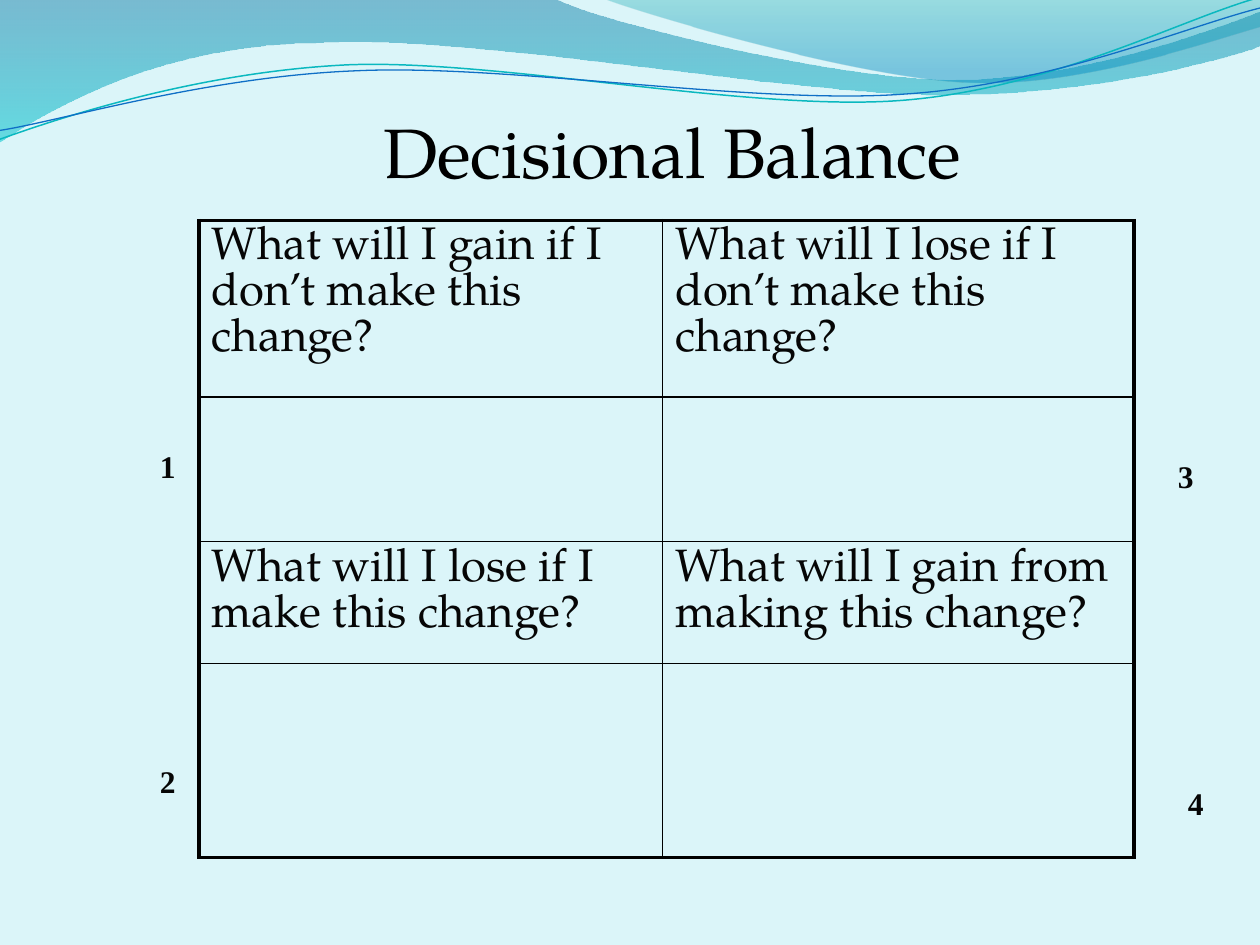
from lxml.etree import SubElement
from pptx import Presentation
from pptx.dml.color import RGBColor
from pptx.enum.text import MSO_ANCHOR, MSO_AUTO_SIZE, PP_ALIGN
from pptx.oxml import parse_xml
from pptx.oxml.ns import nsdecls, qn
from pptx.util import Pt

PX = 9144  # 100 px to the inch

BACKGROUND = RGBColor(0xDB, 0xF5, 0xF9)
BLACK = RGBColor(0, 0, 0)
INK = RGBColor(0x06, 0x06, 0x06)
TEAL_LINE = RGBColor(0x0A, 0xB8, 0xBF)
BLUE_LINE = RGBColor(0x0F, 0x6F, 0xC6)
DEEP_BLUE = RGBColor(0x00, 0x74, 0xA1)
CYAN = RGBColor(0x00, 0xC6, 0xCF)
TEAL = RGBColor(0x00, 0xA1, 0xA9)
SKY = RGBColor(0x00, 0x8B, 0xBF)

SERIF = "TeX Gyre Pagella"
NUMBER_FONT = "Times New Roman"
STRAND_ROTATION = 357.3
THICK, THIN = 2.25, 1

# Each outline is a start point, then segments: one point for a line, three for a Bézier curve.
WIDE_WAVE = [(0, -1), [(440, -1)],
             [(476, 17), (664, 63), (758, 63)], [(853, 63), (958, 26), (1000, 9)],
             [(1001, 36)],
             [(983, 44), (870, 76), (746, 75)], [(622, 75), (382, 28), (257, 34)],
             [(129, 35), (46, 83), (-1, 113)]]
RIGHT_WAVE = [(479, -1), [(509, 11), (682, 62), (769, 65)],
              [(856, 69), (961, 32), (1000, 21)], [(1000, 0)]]
# The strands are given level, before their rotation.
TEAL_STRAND = [(-2, 87), [(47, 72), (158, 41), (277, 41)],
               [(396, 42), (591, 93), (712, 90)], [(832, 87), (939, 36), (1000, 22)]]
BLUE_STRAND = [(-2, 80), [(46, 75), (164, 45), (283, 46)],
               [(403, 46), (596, 88), (716, 85)], [(835, 83), (942, 42), (1002, 30)]]

QUESTIONS = [
    ["What will I gain if I don’t make this change?",
     "What will I lose if I don’t make this change?"],
    ["What will I lose if I make this change?",
     "What will I gain from making this change?"],
]
COLUMN_WIDTHS = [368, 374]
ROW_HEIGHTS = [137, 115, 94, 154]
# number, left, top, width, wraps
QUADRANT_NUMBERS = [("1", 117, 350, 28, True), ("2", 117, 600, 49, True),
                    ("3", 925, 358, 33, False), ("4", 933, 617, 33, False)]


def px(length):
    return round(length * PX)


def add_outline(slide, outline, close):
    """Draw straight edges through all points, then merge each threesome into a curve."""
    start, *segments = outline
    builder = slide.shapes.build_freeform(px(start[0]), px(start[1]))
    builder.add_line_segments(
        [(px(x), px(y)) for segment in segments for x, y in segment], close=close)
    shape = builder.convert_to_shape()
    shape.shadow.inherit = False
    edges = iter(list(shape._element.iter(qn("a:lnTo"))))
    for segment in segments:
        first, *others = [next(edges) for _ in segment]
        if others:
            first.tag = qn("a:cubicBezTo")
        for edge in others:
            first.append(edge[0])
            edge.getparent().remove(edge)
    return shape


def add_wave(slide, outline, stops):
    """Filled wave; stops are (position, colour, opacity in percent), top to bottom."""
    wave = add_outline(slide, outline, close=True)
    wave.line.fill.background()
    wave.fill.gradient()
    wave.fill.gradient_angle = 270
    for stop, (position, color, _) in zip(wave.fill.gradient_stops, stops):
        stop.position = position
        stop.color.rgb = color
    gradient = wave._element.spPr.find(qn("a:gradFill"))
    for color_element, (_, _, opacity) in zip(gradient.iter(qn("a:srgbClr")), stops):
        SubElement(color_element, qn("a:alpha"), val=str(opacity * 1000))


def add_strand(slide, outline, color, width):
    strand = add_outline(slide, outline, close=False)
    strand.rotation = STRAND_ROTATION
    strand.fill.background()
    strand.line.color.rgb = color
    strand.line.width = Pt(width)


def add_run(paragraph, text, font_name, size, color, bold=False):
    run = paragraph.add_run()
    run.text = text
    font = run.font
    font.name, font.size, font.bold = font_name, Pt(size), bold
    font.color.rgb = color


def set_title(slide, text):
    title = slide.shapes.title
    title.left, title.top, title.width, title.height = map(px, (242, 81, 583, 77))
    frame = title.text_frame
    frame.auto_size = MSO_AUTO_SIZE.SHAPE_TO_FIT_TEXT
    frame.vertical_anchor = MSO_ANCHOR.TOP
    frame.paragraphs[0].alignment = PP_ALIGN.CENTER
    add_run(frame.paragraphs[0], text, SERIF, 40, BLACK)


def set_borders(cell, widths):
    """Widths in points, in the order left, right, top, bottom."""
    properties = cell._tc.get_or_add_tcPr()
    for index, (side, width) in enumerate(zip("LRTB", widths)):
        properties.insert(index, parse_xml(
            f'<a:ln{side} {nsdecls("a")} w="{Pt(width)}"><a:solidFill>'
            f'<a:srgbClr val="{BLACK}"/></a:solidFill></a:ln{side}>'))


def add_balance_table(slide):
    table = slide.shapes.add_table(
        len(ROW_HEIGHTS), len(COLUMN_WIDTHS), px(158), px(175),
        px(sum(COLUMN_WIDTHS)), px(sum(ROW_HEIGHTS))).table
    table.first_row = table.horz_banding = False
    for column, width in zip(table.columns, COLUMN_WIDTHS):
        column.width = px(width)
    last_row, last_column = len(ROW_HEIGHTS) - 1, len(COLUMN_WIDTHS) - 1
    for r, height in enumerate(ROW_HEIGHTS):
        table.rows[r].height = px(height)
        for c in range(len(COLUMN_WIDTHS)):
            cell = table.cell(r, c)
            cell.fill.background()
            outer_sides = (c == 0, c == last_column, r == 0, r == last_row)
            set_borders(cell, [THICK if outer else THIN for outer in outer_sides])
            if r % 2 == 0:
                add_run(cell.text_frame.paragraphs[0], QUESTIONS[r // 2][c], SERIF, 26, INK)


def add_quadrant_number(slide, number, left, top, width, wraps):
    frame = slide.shapes.add_textbox(px(left), px(top), px(width), px(40)).text_frame
    frame.word_wrap = wraps
    frame.auto_size = MSO_AUTO_SIZE.SHAPE_TO_FIT_TEXT
    add_run(frame.paragraphs[0], number, NUMBER_FONT, 18, INK, bold=True)


def main():
    presentation = Presentation()
    presentation.slide_width, presentation.slide_height = px(1000), px(750)
    slide = presentation.slides.add_slide(presentation.slide_layouts[5])
    slide.background.fill.solid()
    slide.background.fill.fore_color.rgb = BACKGROUND

    add_wave(slide, WIDE_WAVE, [(0, DEEP_BLUE, 45), (1, CYAN, 55)])
    add_wave(slide, RIGHT_WAVE, [(0, TEAL, 30), (0.8, SKY, 45)])
    add_strand(slide, TEAL_STRAND, TEAL_LINE, 0.85)
    add_strand(slide, BLUE_STRAND, BLUE_LINE, 0.75)
    add_balance_table(slide)
    set_title(slide, "Decisional Balance")
    for quadrant in QUADRANT_NUMBERS:
        add_quadrant_number(slide, *quadrant)
    presentation.save("out.pptx")


if __name__ == "__main__":
    main()
